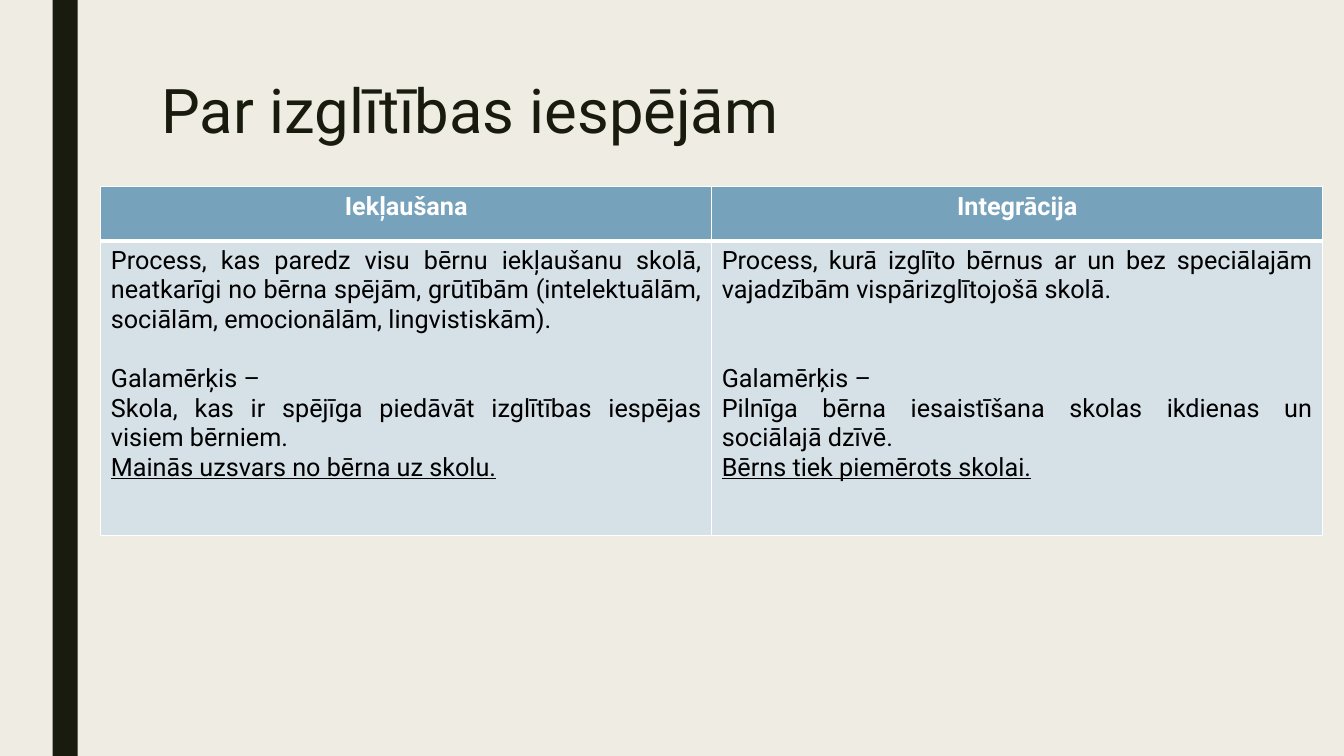
"""Builds a slide comparing inclusion and integration in education."""
import pptx
import pptx.dml.color
import pptx.enum.shapes
import pptx.enum.text
import pptx.oxml
import pptx.oxml.ns
import pptx.util

Pt = pptx.util.Pt
RGBColor = pptx.dml.color.RGBColor
Align = pptx.enum.text.PP_ALIGN

CREAM = RGBColor(0xEF, 0xED, 0xE3)
DARK = RGBColor(0x19, 0x1B, 0x0E)
BLUE = RGBColor(0x77, 0xA2, 0xBB)
PALE_BLUE = RGBColor(0xD6, 0xE0, 0xE7)
WHITE = RGBColor(0xFF, 0xFF, 0xFF)
BLACK = RGBColor(0, 0, 0)

FONT = "Roboto"
LINE_HEIGHT = 21.1
GOAL = "Galamērķis –"
COLUMNS = [
    ("Iekļaušana", 1, [
        "Process, kas paredz visu bērnu iekļaušanu skolā, neatkarīgi no bērna spējām, "
        "grūtībām (intelektuālām, sociālām, emocionālām, lingvistiskām).",
        GOAL,
        "Skola, kas ir spējīga piedāvāt izglītības iespējas visiem bērniem.",
        "Mainās uzsvars no bērna uz skolu.",
    ]),
    ("Integrācija", 2, [
        "Process, kurā izglīto bērnus ar un bez speciālajām vajadzībām "
        "vispārizglītojošā skolā.",
        GOAL,
        "Pilnīga bērna iesaistīšana skolas ikdienas un sociālajā dzīvē.",
        "Bērns tiek piemērots skolai.",
    ]),
]


def format_paragraph(paragraph, size, color, alignment, bold=False):
    paragraph.alignment = alignment
    font = paragraph.font
    font.name, font.size, font.bold = FONT, Pt(size), bold
    font.color.rgb = color


def add_side_bar(slide):
    bar = slide.shapes.add_shape(
        pptx.enum.shapes.MSO_SHAPE.RECTANGLE, Pt(37.5), Pt(0), Pt(18), Pt(540))
    bar.shadow.inherit = False
    bar.fill.solid()
    bar.fill.fore_color.rgb = DARK
    bar.line.fill.background()


def set_title(slide, text):
    title = slide.shapes.title
    title.left, title.top, title.width, title.height = Pt(108), Pt(54), Pt(756), Pt(116.6)
    frame = title.text_frame
    frame.text = text
    frame.word_wrap = True
    frame.auto_size = pptx.enum.text.MSO_AUTO_SIZE.NONE
    frame.vertical_anchor = pptx.enum.text.MSO_ANCHOR.TOP
    paragraph = frame.paragraphs[0]
    format_paragraph(paragraph, 44, DARK, Align.LEFT)
    paragraph.line_spacing = 0.89


def style_cell(cell, fill, widths):
    properties = cell._tc.get_or_add_tcPr()
    for side, width in zip("LRTB", widths):
        properties.append(pptx.oxml.parse_xml(
            f'<a:ln{side} {pptx.oxml.ns.nsdecls("a")} w="{Pt(width)}">'
            f'<a:solidFill><a:srgbClr val="{WHITE}"/></a:solidFill></a:ln{side}>'))
    cell.fill.solid()
    cell.fill.fore_color.rgb = fill


def fill_header(cell, text):
    style_cell(cell, BLUE, (1, 1, 1, 3))
    cell.text = text
    format_paragraph(cell.text_frame.paragraphs[0], 18, WHITE, Align.CENTER, bold=True)


def fill_body(cell, texts, gap_lines):
    style_cell(cell, PALE_BLUE, (1, 1, 3, 1))
    cell.text = "\n".join(texts)
    paragraphs = cell.text_frame.paragraphs
    for paragraph in paragraphs:
        format_paragraph(paragraph, 18, BLACK, Align.JUSTIFY)
    paragraphs[1].space_before = Pt(gap_lines * LINE_HEIGHT)
    paragraphs[-1].font.underline = True


def add_comparison(slide):
    table = slide.shapes.add_table(
        2, len(COLUMNS), Pt(72), Pt(133.4), Pt(872.8), Pt(249)).table
    table.rows[0].height = Pt(38.7)
    table.rows[1].height = Pt(210.3)
    for index, (heading, gap_lines, texts) in enumerate(COLUMNS):
        fill_header(table.cell(0, index), heading)
        fill_body(table.cell(1, index), texts, gap_lines)


def main():
    presentation = pptx.Presentation()
    presentation.slide_width, presentation.slide_height = Pt(960), Pt(540)
    slide = presentation.slides.add_slide(presentation.slide_layouts[5])
    slide.background.fill.solid()
    slide.background.fill.fore_color.rgb = CREAM
    add_side_bar(slide)
    set_title(slide, "Par izglītības iespējām")
    add_comparison(slide)
    presentation.save("out.pptx")


if __name__ == "__main__":
    main()
